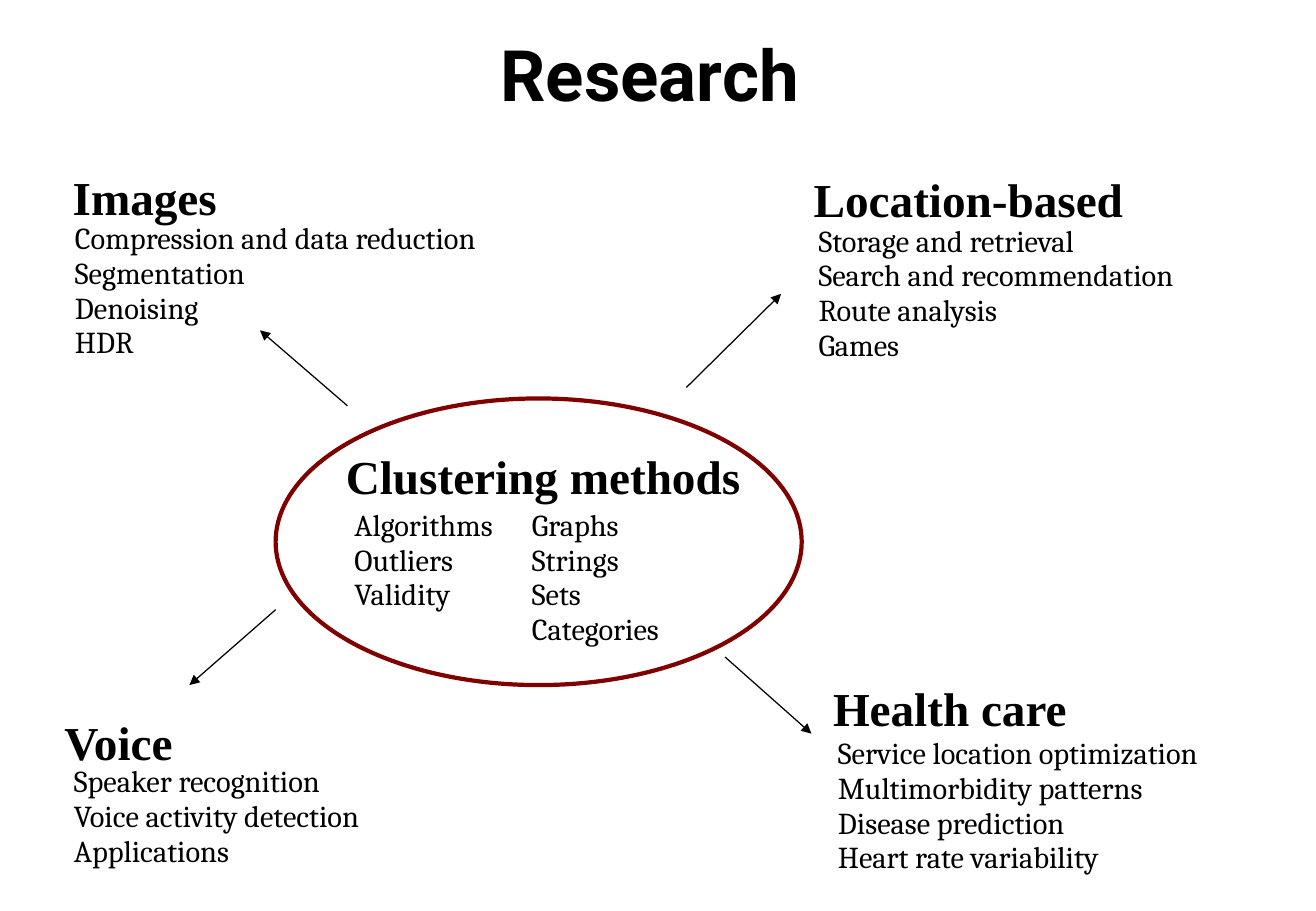
from lxml import etree
from pptx import Presentation
from pptx.dml.color import RGBColor
from pptx.enum import shapes, text
from pptx.oxml import ns
from pptx.util import Pt

COLORS = {"ink": "000000", "ring": "800000", "paper": "FFFFFF"}
FORMATS = {
    "title": {"name": "Roboto", "size": Pt(42), "bold": True},
    "heading": {"name": "Times New Roman", "size": Pt(28), "bold": True},
    "list": {"name": "Cambria", "size": Pt(18), "bold": False},
}
LEFT, CENTER = text.PP_ALIGN.LEFT, text.PP_ALIGN.CENTER

presentation = Presentation()
presentation.slide_width, presentation.slide_height = Pt(780), Pt(540)
slide = presentation.slides.add_slide(presentation.slide_layouts[6])
slide.background.fill.solid()
slide.background.fill.fore_color.rgb = RGBColor.from_string(COLORS["paper"])


def add_text(lines, place, style, align=LEFT, spacing=1.0, margins=(7.2, 3.6)):
    """Add a text box with one paragraph per line."""
    box = slide.shapes.add_textbox(*map(Pt, place))
    frame = box.text_frame
    frame.word_wrap = True
    frame.margin_left = frame.margin_right = Pt(margins[0])
    frame.margin_top = Pt(margins[1])
    frame.margin_bottom = Pt(min(margins[1], 3.6))
    for index, line in enumerate(lines):
        paragraph = frame.paragraphs[0] if index == 0 else frame.add_paragraph()
        paragraph.alignment = align
        paragraph.line_spacing = spacing
        run = paragraph.add_run()
        run.text = line
        for key, value in FORMATS[style].items():
            setattr(run.font, key, value)
        run.font.color.rgb = RGBColor.from_string(COLORS["ink"])
    return frame


# Title
title = add_text(["Research"], (61.2, 15.1, 648, 62.6), "title", CENTER, 0.93, (0, 0))
title.vertical_anchor = text.MSO_ANCHOR.MIDDLE

# Ring around the central topic
ring = slide.shapes.add_shape(
    shapes.MSO_SHAPE.OVAL, Pt(163.4), Pt(236.2), Pt(311.8), Pt(169.9))
ring.shadow.inherit = False
ring.fill.background()
ring.line.color.rgb = RGBColor.from_string(COLORS["ring"])
ring.line.width = Pt(2.5)

# Headings: text, left, top, width, alignment
headings = [
    ("Images", 36, 92.9, 143.3, LEFT),
    ("Location-based", 475.2, 94.3, 207.4, LEFT),
    ("Clustering methods", 180, 258.5, 283.7, CENTER),
    ("Voice", 31, 416.2, 130.3, LEFT),
    ("Health care", 486.7, 396, 240.5, LEFT),
]
for heading, left, top, width, align in headings:
    add_text([heading], (left, top, width, 41), "heading", align, margins=(7.2, 6.6))

# Lists: left, top, width, items
lists = [
    (37.4, 128.2, 252, ["Compression and data reduction", "Segmentation",
                        "Denoising", "HDR"]),
    (478.1, 129.6, 235.4, ["Storage and retrieval", "Search and recommendation",
                           "Route analysis", "Games"]),
    (203, 298.1, 104.4, ["Algorithms", "Outliers", "Validity"]),
    (308.2, 298.1, 104.4, ["Graphs", "Strings", "Sets", "Categories"]),
    (36.7, 450, 198.7, ["Speaker recognition", "Voice activity detection",
                        "Applications"]),
    (489.6, 433.4, 238.3, ["Service location optimization", "Multimorbidity patterns",
                           "Disease prediction", "Heart rate variability"]),
]
for left, top, width, items in lists:
    height = 7.2 + 20.9 * len(items)
    add_text(items, (left, top, width, height), "list", spacing=0.95)

# Arrows from the ring to the four application areas
arrows = [
    (205.9, 240.5, 154.1, 195.8),
    (406.8, 229.7, 463, 174.2),
    (429.8, 389.5, 481, 434.9),
    (163.4, 361.4, 112.3, 406.1),
]
for ends in arrows:
    arrow = slide.shapes.add_connector(
        shapes.MSO_CONNECTOR.STRAIGHT, *map(Pt, ends))
    arrow.line.color.rgb = RGBColor.from_string(COLORS["ink"])
    arrow.line.width = Pt(0.75)
    line = arrow.line._get_or_add_ln()
    etree.SubElement(line, ns.qn("a:tailEnd"), type="triangle")
    etree.SubElement(line.getparent(), ns.qn("a:effectLst"))

presentation.save("out.pptx")
